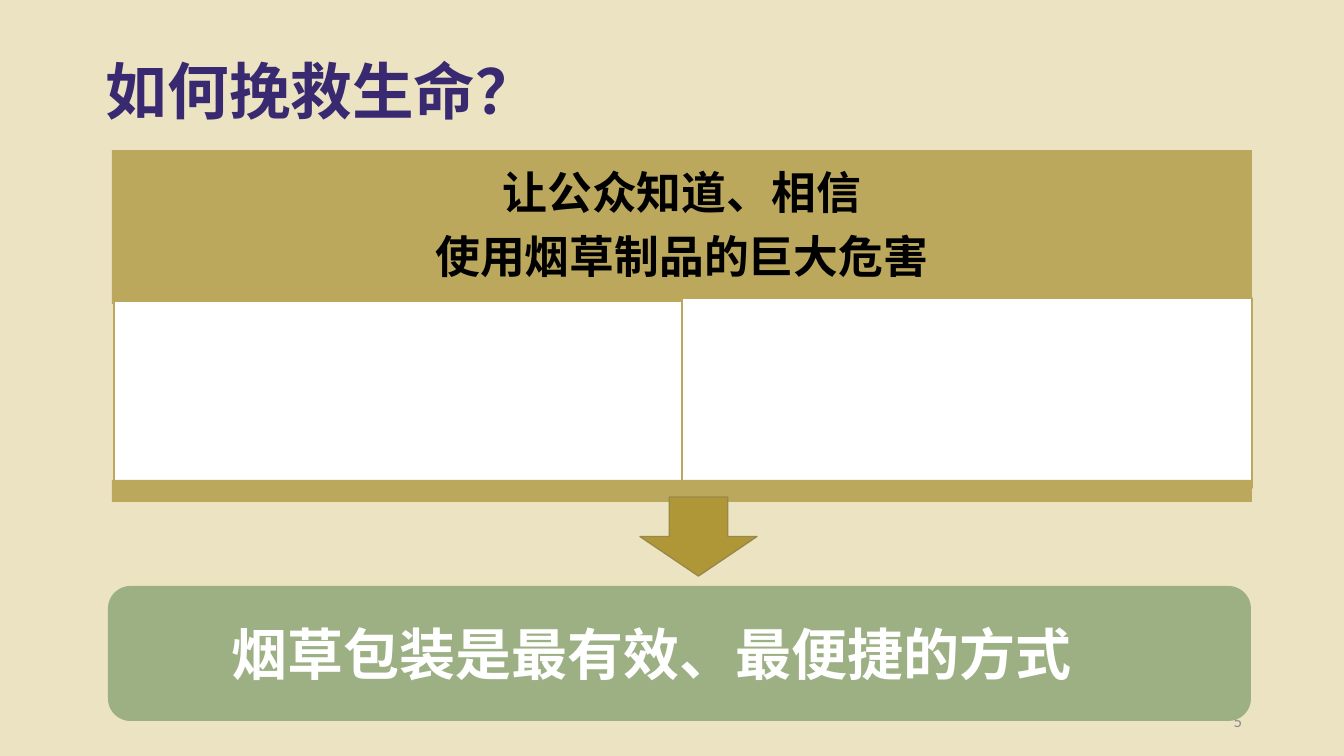
from pptx import Presentation
from pptx.dml.color import RGBColor
from pptx.enum.shapes import MSO_SHAPE
from pptx.enum.text import MSO_ANCHOR, PP_ALIGN
from pptx.oxml.ns import qn
from pptx.util import Emu, Pt

RECTANGLE = MSO_SHAPE.RECTANGLE
ROUNDED = MSO_SHAPE.ROUNDED_RECTANGLE
DOWN_ARROW = MSO_SHAPE.DOWN_ARROW
MIDDLE = MSO_ANCHOR.MIDDLE
LEFT, CENTER, RIGHT = PP_ALIGN.LEFT, PP_ALIGN.CENTER, PP_ALIGN.RIGHT

SCALE = 914400 / 100.8  # EMU in one px
LATIN, CHINESE = "Calibri", "Noto Sans CJK SC"
COLORS = {
    "background": "EBE3C2",
    "gold": "BBA85D",
    "white": "FFFFFF",
    "arrow": "AF9738",
    "arrow_line": "98894B",
    "green": "9CB084",
    "title": "382971",
    "black": "000000",
    "gray": "8C8C8C",
}


def add_box(kind, bounds, fill=None, line=None):
    """Add a preset shape, or a text box when kind is None."""
    lengths = [Emu(round(value * SCALE)) for value in bounds]
    if kind is None:
        return page.shapes.add_textbox(*lengths)
    box = page.shapes.add_shape(kind, *lengths)
    box.shadow.inherit = False
    box.fill.solid()
    box.fill.fore_color.rgb = RGBColor.from_string(COLORS[fill])
    if line:
        box.line.color.rgb = RGBColor.from_string(COLORS[line])
        box.line.width = Pt(1)
    else:
        box.line.fill.background()
    return box


def write(box, text, size, font, color, align, bold=True, spacing=1.0, after=0):
    frame = box.text_frame
    frame.word_wrap = True
    frame.vertical_anchor = MIDDLE
    frame.text = text
    for para in frame.paragraphs:
        para.alignment = align
        para.line_spacing = spacing
        para.space_after = Pt(after)
        for span in para.runs:
            span.font.size = Pt(size)
            span.font.name = font
            span.font.bold = bold
            span.font.color.rgb = RGBColor.from_string(COLORS[color])
            if font == CHINESE:
                east_asian = span.font._element.makeelement(qn("a:ea"), {"typeface": font})
                span.font._element.append(east_asian)


deck = Presentation()
deck.slide_width = Emu(round(1344 * SCALE))
deck.slide_height = Emu(round(756 * SCALE))
page = deck.slides.add_slide(deck.slide_layouts[6])
page.background.fill.solid()
page.background.fill.fore_color.rgb = RGBColor.from_string(COLORS["background"])

# Gold panel with two empty white fields
header = add_box(RECTANGLE, (112, 150, 1140, 154), "gold")
write(header, "让公众知道、相信\n使用烟草制品的巨大危害", 32, LATIN, "black", CENTER,
      spacing=0.9, after=11)
for bounds in ((114, 301, 570, 184), (682, 298, 570, 190)):
    add_box(RECTANGLE, bounds, "white", "gold")
add_box(RECTANGLE, (112, 480, 1140, 22), "gold")

# Slide number
number = add_box(None, (950, 701, 302, 40))
write(number, "5", 12, LATIN, "gray", RIGHT, bold=False)

# Arrow to the conclusion
add_box(DOWN_ARROW, (640, 497, 117, 79), "arrow", "arrow_line")
conclusion = add_box(ROUNDED, (108, 586, 1143, 135), "green")
write(conclusion, "烟草包装是最有效、最便捷的方式　", 40, CHINESE, "white", CENTER)

# Title
title = add_box(None, (96, 22, 1159, 146))
write(title, "如何挽救生命？", 44, CHINESE, "title", LEFT, spacing=0.9)

deck.save("out.pptx")
